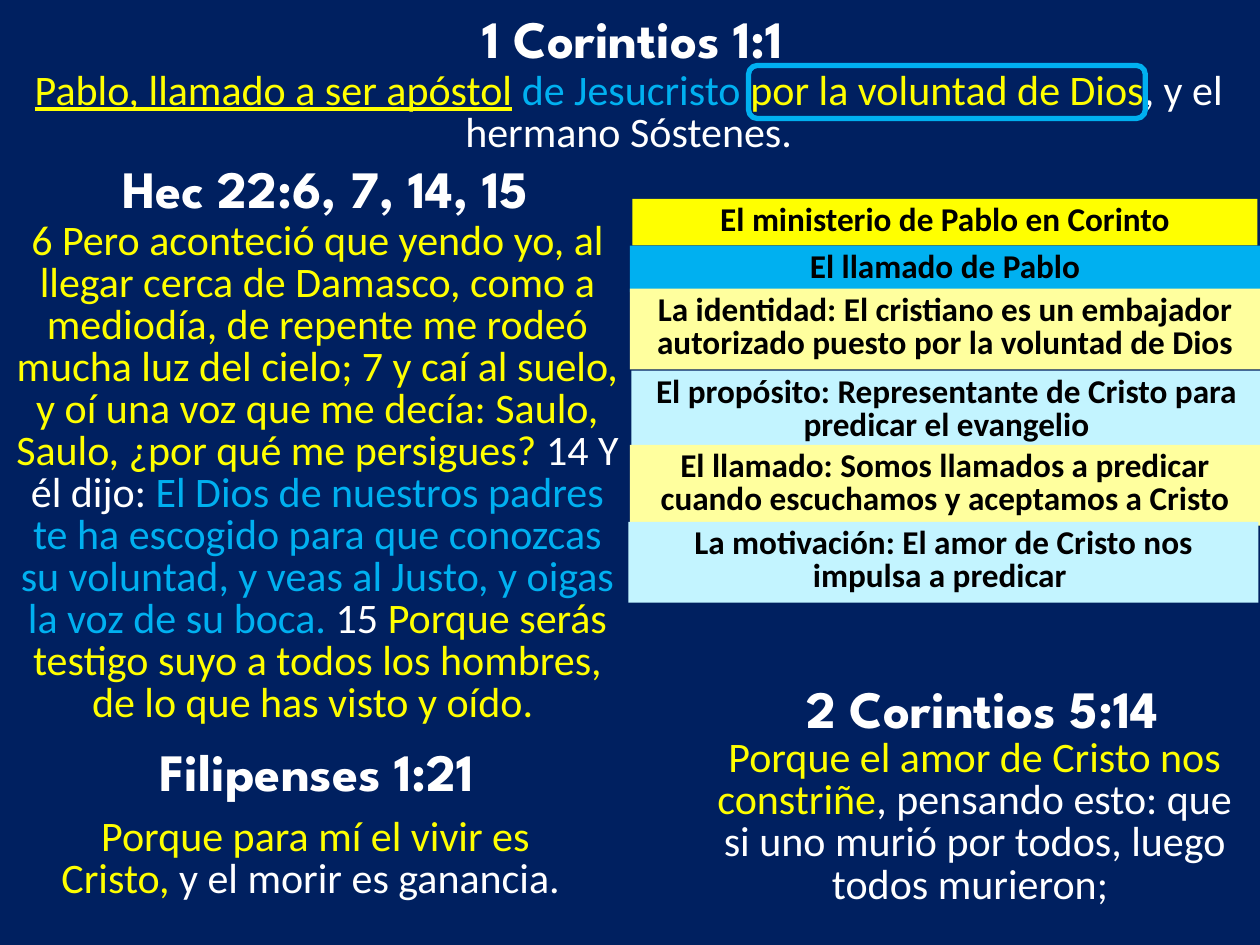
from dataclasses import dataclass
from typing import NamedTuple, Optional

from pptx import Presentation
from pptx.dml.color import RGBColor as Rgb
from pptx.enum.shapes import MSO_SHAPE as Preset
from pptx.enum.text import MSO_ANCHOR as Anchor, MSO_AUTO_SIZE as AutoSize, PP_ALIGN as Align
from pptx.util import Cm, Pt


@dataclass(frozen=True)
class Theme:
    navy: str = "002060"
    white: str = "FFFFFF"
    black: str = "000000"
    yellow: str = "FFFF00"
    blue: str = "00B0F0"
    pale_yellow: str = "FFFF9E"
    pale_blue: str = "C3F4FF"
    heading_font: str = "League Spartan"
    body_font: str = "Calibri"
    heading_size: int = 30
    verse_size: int = 24
    point_size: int = 19


THEME = Theme()


class Box(NamedTuple):
    """Left, top, width and height in centimetres."""
    left: float
    top: float
    width: float
    height: float

    def lengths(self) -> list:
        return [Cm(value) for value in self]


class Span(NamedTuple):
    text: str
    color: str = THEME.yellow
    underline: bool = False


class Passage(NamedTuple):
    reference: str
    heading_box: Box
    verse_box: Box
    spans: list


class Point(NamedTuple):
    text: str
    left: float
    top: float
    fill: str
    width: float = 12.7
    height: float = 1.63


def write_text(shape, spans: list, *, font: str, size: int, bold: bool = False,
               leading: Optional[int] = None) -> None:
    """Fill a shape with one centred paragraph of coloured spans."""
    frame = shape.text_frame
    frame.word_wrap = True
    frame.auto_size = AutoSize.SHAPE_TO_FIT_TEXT
    frame.vertical_anchor = Anchor.TOP
    paragraph = frame.paragraphs[0]
    paragraph.alignment = Align.CENTER
    if leading:
        paragraph.line_spacing = Pt(leading)
    for span in spans:
        run = paragraph.add_run()
        run.text = span.text
        run.font.name = font
        run.font.size = Pt(size)
        run.font.bold = bold
        run.font.underline = span.underline
        run.font.color.rgb = Rgb.from_string(span.color)


def draw_passage(slide, passage: Passage) -> None:
    heading = slide.shapes.add_textbox(*passage.heading_box.lengths())
    write_text(heading, [Span(passage.reference, THEME.white)],
               font=THEME.heading_font, size=THEME.heading_size, bold=True)
    verse = slide.shapes.add_textbox(*passage.verse_box.lengths())
    write_text(verse, passage.spans, font=THEME.body_font,
               size=THEME.verse_size, leading=THEME.verse_size)


def draw_point(slide, point: Point) -> None:
    box = Box(point.left, point.top, point.width, point.height)
    band = slide.shapes.add_shape(Preset.RECTANGLE, *box.lengths())
    band.shadow.inherit = False
    band.fill.solid()
    band.fill.fore_color.rgb = Rgb.from_string(point.fill)
    band.line.fill.background()
    write_text(band, [Span(point.text, THEME.black)], font=THEME.body_font,
               size=THEME.point_size, bold=True, leading=THEME.point_size)


def draw_highlight(slide, box: Box) -> None:
    highlight = slide.shapes.add_shape(Preset.ROUNDED_RECTANGLE, *box.lengths())
    highlight.shadow.inherit = False
    highlight.fill.background()
    highlight.line.color.rgb = Rgb.from_string(THEME.blue)
    highlight.line.width = Pt(3)


PASSAGES = [
    Passage(" 1 Corintios 1:1", Box(6.71, 0, 11.81, 1.55), Box(0, 1.32, 25.35, 1.98), [
        Span("Pablo, llamado a ser apóstol", underline=True),
        Span(" "),
        Span("de Jesucristo", THEME.blue),
        Span(" por la voluntad de Dios"),
        Span(", y el hermano Sóstenes.", THEME.white),
    ]),
    Passage(" Hec 22:6, 7, 14, 15", Box(0.51, 3.02, 11.81, 1.55), Box(0.05, 4.34, 12.7, 10.52), [
        Span("6 Pero aconteció que yendo yo, al llegar cerca de Damasco, como a mediodía, "
             "de repente me rodeó mucha luz del cielo; 7 y caí al suelo, y oí una voz que "
             "me decía: Saulo, Saulo, ¿por qué me persigues? "),
        Span("14 Y él dijo: ", THEME.white),
        Span("El Dios de nuestros padres te ha escogido para que conozcas su voluntad, "
             "y veas al Justo, y oigas la voz de su boca.", THEME.blue),
        Span(" 15 ", THEME.white),
        Span("Porque serás testigo suyo a todos los hombres, de lo que has visto y oído. "),
    ]),
    Passage(" 2 Corintios 5:14", Box(14.2, 13.51, 10.92, 1.55), Box(14, 14.78, 11.3, 3.68), [
        Span("Porque el amor de Cristo nos constriñe"),
        Span(", pensando esto: que si uno murió por todos, luego todos murieron; ", THEME.white),
    ]),
    Passage(" Filipenses 1:21", Box(0.79, 14.78, 10.92, 1.55), Box(0.71, 16.36, 11.3, 1.98), [
        Span("Porque para mí el vivir es Cristo, "),
        Span("y el morir es ganancia. ", THEME.white),
    ]),
]

POINTS = [
    Point("El ministerio de Pablo en Corinto", 12.75, 4.01, THEME.yellow, 12.6, 0.94),
    Point("El llamado de Pablo", 12.7, 4.95, THEME.blue, height=0.94),
    Point("La identidad: El cristiano es un embajador autorizado puesto por la voluntad de Dios",
          12.7, 5.82, THEME.pale_yellow),
    Point("El propósito: Representante de Cristo para predicar el evangelio",
          12.73, 7.47, THEME.pale_blue),
    Point("El llamado: Somos llamados a predicar cuando escuchamos y aceptamos a Cristo",
          12.7, 8.97, THEME.pale_yellow),
    Point("La motivación: El amor de Cristo nos impulsa a predicar ",
          12.67, 10.52, THEME.pale_blue),
]


def main() -> None:
    deck = Presentation()
    deck.slide_width, deck.slide_height = Cm(25.4), Cm(19.05)
    slide = deck.slides.add_slide(deck.slide_layouts[6])
    slide.background.fill.solid()
    slide.background.fill.fore_color.rgb = Rgb.from_string(THEME.navy)

    # Bible passages
    for passage in PASSAGES:
        draw_passage(slide, passage)

    # Outline of the sermon
    for point in POINTS:
        draw_point(slide, point)

    # Frame around "por la voluntad de Dios"
    draw_highlight(slide, Box(15.09, 1.32, 8, 1.07))

    deck.save("out.pptx")


if __name__ == "__main__":
    main()
